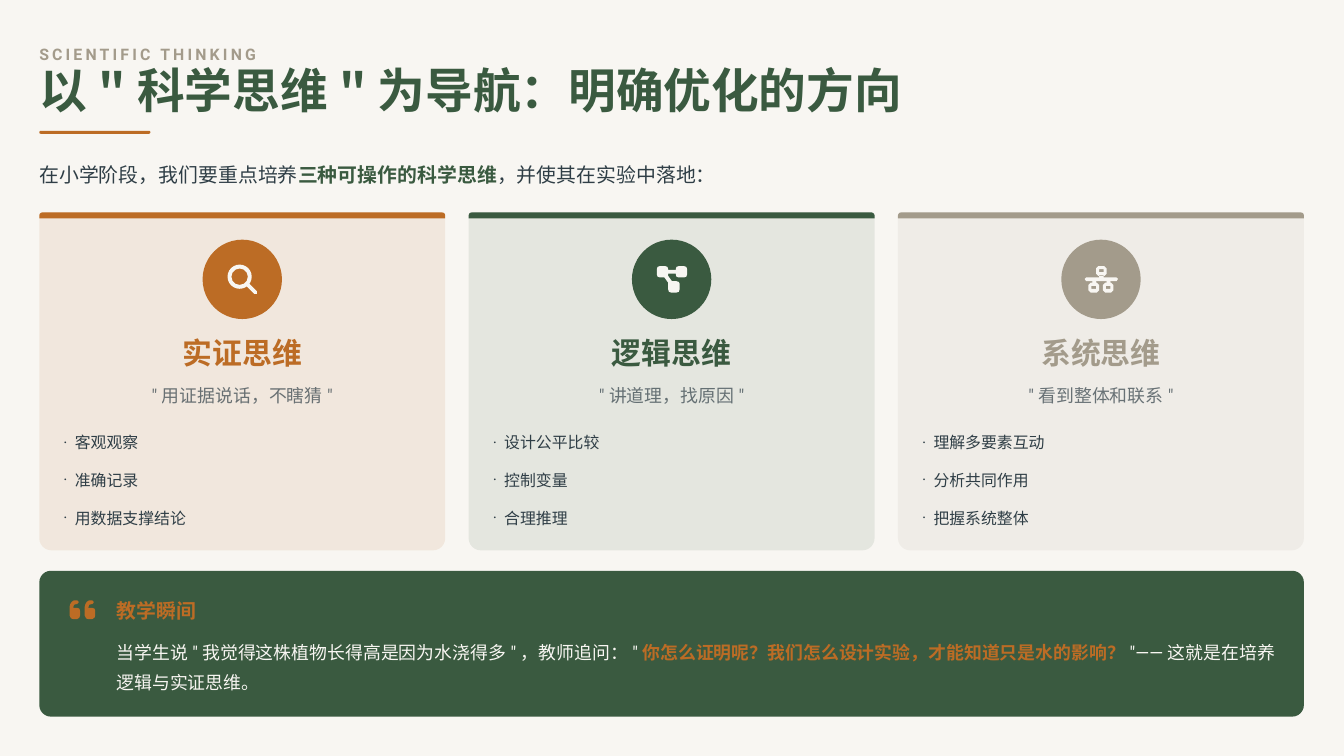
from pptx import Presentation
from pptx.dml.color import RGBColor
from pptx.enum.shapes import MSO_CONNECTOR, MSO_SHAPE
from pptx.enum.text import MSO_ANCHOR, MSO_AUTO_SIZE, PP_ALIGN
from pptx.oxml.ns import qn
from pptx.util import Inches, Pt
from lxml.etree import SubElement

CREAM, GREEN, ORANGE, TAUPE, INK = "F8F6F2", "3A5A40", "BC6C25", "A39B8B", "2F3E46"
SANS, LATIN = "Noto Sans CJK SC", "Roboto"
ROUND, TOP_ROUND = MSO_SHAPE.ROUNDED_RECTANGLE, MSO_SHAPE.ROUND_2_SAME_RECTANGLE


def paint(fill, color, alpha=100):
    fill.solid()
    fill.fore_color.rgb = RGBColor.from_string(color)
    if alpha < 100:
        clr = fill._xPr.find(qn("a:solidFill"))[0]
        SubElement(clr, qn("a:alpha")).set("val", str(alpha * 1000))


def write(text, box, sp=None, size=17, font=LATIN, color=INK, alpha=100, bold=False,
          accent=None, align=PP_ALIGN.LEFT, spacing=1.0, track=0, bullet=None, before=0):
    box = [Inches(v) for v in box]
    sp = sp or s.shapes.add_textbox(*box)
    sp.left, sp.top, sp.width, sp.height = box
    tf = sp.text_frame
    tf.word_wrap, tf.auto_size = True, MSO_AUTO_SIZE.NONE
    tf.vertical_anchor = MSO_ANCHOR.MIDDLE
    tf.margin_left = tf.margin_top = tf.margin_right = tf.margin_bottom = 0
    for i, line in enumerate(text.split("\n")):
        p = tf.add_paragraph() if i else tf.paragraphs[0]
        p.alignment, p.line_spacing = align, spacing
        p.space_before = Pt(before if i else 0)
        if bullet:
            pPr = p._p.get_or_add_pPr()
            pPr.set("marL", str(Inches(0.15)))
            pPr.set("indent", str(-Inches(0.15)))
            SubElement(pPr, qn("a:buFont")).set("typeface", font)
            SubElement(pPr, qn("a:buChar")).set("char", bullet)
        for j, part in enumerate(line.split("**")):
            r = p.add_run()
            r.text = part
            r.font.size, r.font.name = Pt(size), font
            r.font.bold = bold or j % 2 == 1
            paint(r.font.fill, accent if j % 2 else color, alpha)
            rPr = r._r.get_or_add_rPr()
            SubElement(rPr, qn("a:ea")).set("typeface", font)
            if track:
                rPr.set("spc", str(track * 100))


prs = Presentation()
prs.slide_width, prs.slide_height = Inches(17.78), Inches(10)
s = prs.slides.add_slide(prs.slide_layouts[5])
paint(s.background.fill, CREAM)

cards = [
    (ORANGE, "实证思维", "\"用证据说话，不瞎猜\"", "客观观察\n准确记录\n用数据支撑结论"),
    (GREEN, "逻辑思维", "\"讲道理，找原因\"", "设计公平比较\n控制变量\n合理推理"),
    (TAUPE, "系统思维", "\"看到整体和联系\"", "理解多要素互动\n分析共同作用\n把握系统整体"),
]
shapes = [
    (ROUND, (0.52, 1.73, 1.47, 0.04), ORANGE, 100, [0.5]),
    (ROUND, (0.52, 7.55, 16.73, 1.93), GREEN, 100, [0.08]),
]
for i, (color, *_) in enumerate(cards):
    x = 0.52 + 5.68 * i
    shapes += [
        (TOP_ROUND, (x, 2.81, 5.37, 4.47), color, 10, [0.018, 0.036]),
        (TOP_ROUND, (x, 2.81, 5.37, 0.08), color, 100, [0.5, 0]),
        (MSO_SHAPE.OVAL, (x + 2.16, 3.17, 1.05, 1.05), color, 100, []),
    ]
shapes.append((MSO_SHAPE.DONUT, (3.01, 3.5, 0.32, 0.32), CREAM, 100, [0.16]))
for kind, box, color, alpha, adj in shapes:
    sp = s.shapes.add_shape(kind, *[Inches(v) for v in box])
    sp.shadow.inherit = False
    sp.line.fill.background()
    paint(sp.fill, color, alpha)
    for i, v in enumerate(adj):
        sp.adjustments[i] = v

handle = s.shapes.add_connector(MSO_CONNECTOR.STRAIGHT, *[
    Inches(v) for v in (3.28, 3.77, 3.38, 3.87)])
handle.line.width = Pt(3.5)
paint(handle.line.fill, CREAM)
handle.line._ln.set("cap", "rnd")
SubElement(handle._element.spPr, qn("a:effectLst"))

network = [[
    (8.69, 3.56), (8.7, 3.53), (8.73, 3.52), (8.8, 3.52), (8.83, 3.53), (8.84, 3.56),
    (8.84, 3.57), (8.94, 3.57), (8.94, 3.56), (8.95, 3.53), (8.98, 3.52), (9.05, 3.52),
    (9.08, 3.53), (9.09, 3.56), (9.09, 3.63), (9.08, 3.66), (9.05, 3.67), (8.98, 3.67),
    (8.95, 3.66), (8.94, 3.63), (8.94, 3.62), (8.84, 3.62), (8.84, 3.65), (8.89, 3.72),
    (8.95, 3.72), (8.98, 3.73), (8.99, 3.75), (8.99, 3.83), (8.98, 3.86), (8.95, 3.87),
    (8.88, 3.87), (8.85, 3.86), (8.84, 3.83), (8.84, 3.74), (8.79, 3.67), (8.73, 3.67),
    (8.7, 3.66), (8.69, 3.63)]]

hierarchy = [[
    (14.35, 3.69), (14.37, 3.67), (14.54, 3.67), (14.54, 3.64), (14.6, 3.64), (14.6, 3.67),
    (14.77, 3.67), (14.79, 3.69), (14.77, 3.72), (14.69, 3.72), (14.69, 3.74), (14.64, 3.74),
    (14.64, 3.72), (14.5, 3.72), (14.5, 3.74), (14.45, 3.74), (14.45, 3.72), (14.37, 3.72)]]
for x, y in [(14.5, 3.52), (14.4, 3.74), (14.59, 3.74)]:
    outer = [(0.03, 0), (0.11, 0), (0.14, 0.03), (0.14, 0.1), (0.11, 0.13), (0.03, 0.13),
             (0, 0.1), (0, 0.03)]
    hole = [(0.04, 0.04), (0.04, 0.08), (0.1, 0.08), (0.1, 0.04)]
    hierarchy += [[(x + dx, y + dy) for dx, dy in outline] for outline in (outer, hole)]

mark = [(0, 0.09), (0.01, 0.05), (0.03, 0.02), (0.06, 0), (0.1, 0), (0.12, 0.02),
        (0.12, 0.03), (0.1, 0.05), (0.09, 0.05), (0.06, 0.06), (0.05, 0.09), (0.05, 0.1),
        (0.1, 0.1), (0.13, 0.11), (0.14, 0.14), (0.14, 0.2), (0.13, 0.23), (0.1, 0.25),
        (0.05, 0.25), (0.02, 0.24), (0, 0.2)]
quote = [[(x + dx, 7.94 + dy) for dx, dy in mark] for x in (0.92, 1.12)]

for outlines, color in [(network, CREAM), (hierarchy, CREAM), (quote, ORANGE)]:
    fb = None
    for outline in outlines:
        pts = [(Inches(x), Inches(y)) for x, y in outline]
        if fb:
            fb.move_to(*pts[0])
        else:
            fb = s.shapes.build_freeform(*pts[0])
        fb.add_line_segments(pts[1:], close=True)
    sp = fb.convert_to_shape()
    sp.shadow.inherit = False
    sp.line.fill.background()
    paint(sp.fill, color)

write("SCIENTIFIC THINKING", (0.52, 0.52, 16.83, 0.31), size=15.1, color=TAUPE,
      bold=True, spacing=1.3, track=3)
write("以\"科学思维\"为导航：明确优化的方向", (0.52, 0.94, 17.04, 0.63), sp=s.shapes.title,
      size=45.4, font=SANS, color=GREEN, bold=True, spacing=0.8)
write("在小学阶段，我们要重点培养**三种可操作的科学思维**，并使其在实验中落地：",
      (0.52, 2.03, 16.86, 0.43), size=18.9, accent=GREEN, spacing=1.4)
for i, (color, name, motto, points) in enumerate(cards):
    x = 0.52 + 5.68 * i
    write(name, (x + 0.22, 4.43, 4.93, 0.47), size=28.4, font=SANS, color=color,
          bold=True, align=PP_ALIGN.CENTER)
    write(motto, (x + 0.26, 5, 4.85, 0.37), alpha=70, align=PP_ALIGN.CENTER, spacing=1.3)
    write(points, (x + 0.32, 5.64, 4.84, 1.33), size=15.1, spacing=1.4, bullet="·", before=10.6)
write("教学瞬间", (1.54, 7.86, 15.52, 0.37), size=18.9, font=SANS, color=ORANGE,
      bold=True, spacing=1.2)
write("当学生说\"我觉得这株植物长得高是因为水浇得多\"，教师追问：\""
      "**你怎么证明呢？我们怎么设计实验，才能知道只是水的影响？**"
      "\"——这就是在培养逻辑与实证思维。",
      (1.54, 8.39, 15.51, 0.77), color=CREAM, accent=ORANGE, spacing=1.4)

prs.save("out.pptx")
